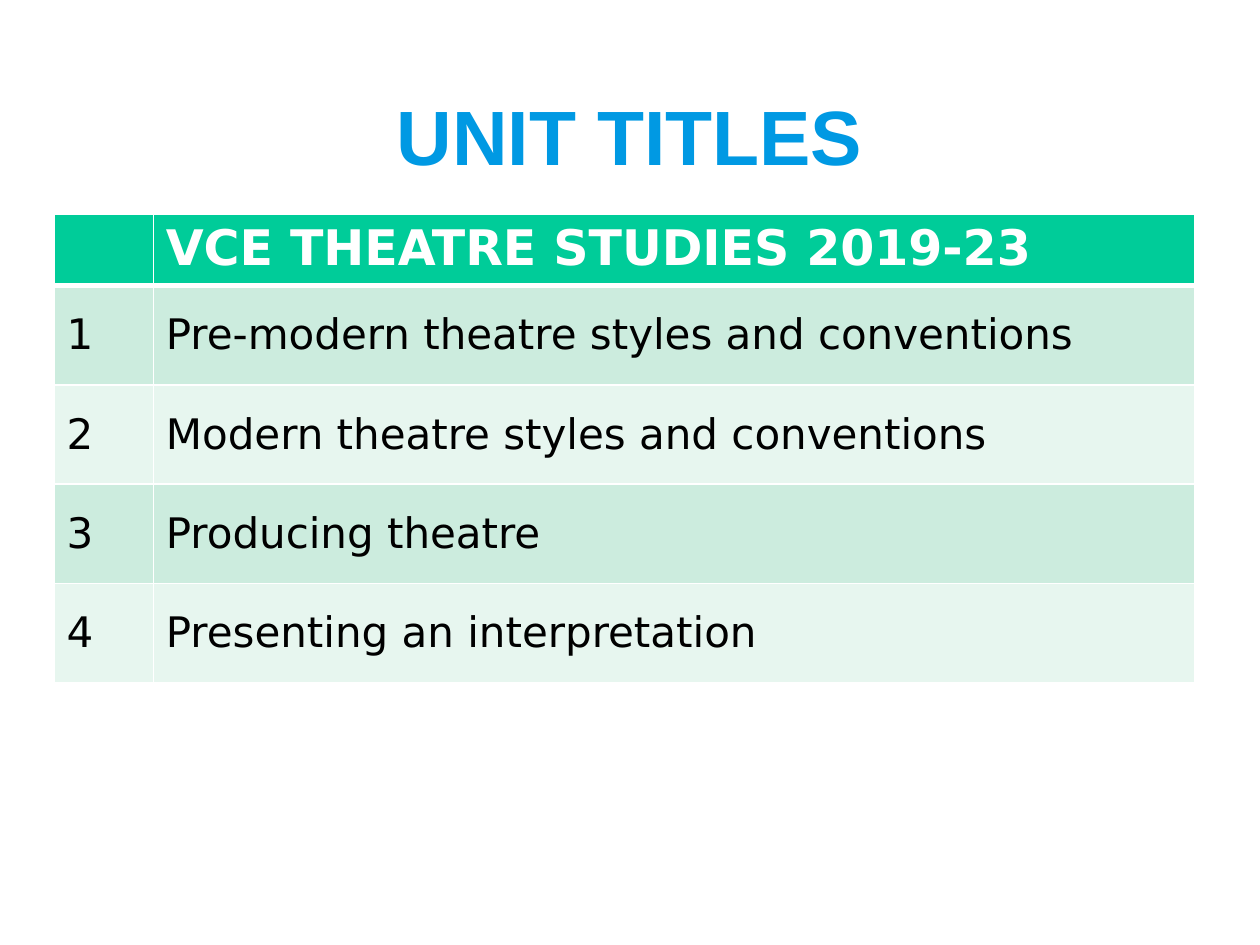
from lxml import etree
from pptx import Presentation
from pptx.dml.color import RGBColor
from pptx.enum.text import MSO_ANCHOR, PP_ALIGN
from pptx.oxml.ns import qn
from pptx.util import Cm, Pt

MIDDLE = MSO_ANCHOR.MIDDLE
CENTER = PP_ALIGN.CENTER

TITLE_BLUE = RGBColor(0x00, 0x99, 0xE3)
HEADER_GREEN = RGBColor(0x00, 0xCC, 0x99)
DARK_BAND = RGBColor(0xCC, 0xEC, 0xDE)
LIGHT_BAND = RGBColor(0xE7, 0xF6, 0xEF)
WHITE = RGBColor(0xFF, 0xFF, 0xFF)
BLACK = RGBColor(0x00, 0x00, 0x00)

HEADING = "VCE THEATRE STUDIES 2019-23"
UNITS = [
    "Pre-modern theatre styles and conventions",
    "Modern theatre styles and conventions",
    "Producing theatre",
    "Presenting an interpretation",
]


def set_font(paragraph, name, size, color, bold):
    font = paragraph.font
    font.name = name
    font.size = Pt(size)
    font.bold = bold
    font.color.rgb = color


def add_title(slide, text):
    title = slide.shapes.add_textbox(Cm(1.27), Cm(1.52), Cm(22.86), Cm(2.41))
    frame = title.text_frame
    frame.word_wrap = True
    frame.vertical_anchor = MIDDLE
    paragraph = frame.paragraphs[0]
    paragraph.text = text
    paragraph.alignment = CENTER
    set_font(paragraph, "Arial", 44, TITLE_BLUE, True)


def set_borders(cell, bottom_width):
    properties = cell._tc.get_or_add_tcPr()
    widths = {"a:lnL": 1, "a:lnR": 1, "a:lnT": 1, "a:lnB": bottom_width}
    for side, width in widths.items():
        line = etree.SubElement(properties, qn(side), w=str(Pt(width)))
        fill = etree.SubElement(line, qn("a:solidFill"))
        etree.SubElement(fill, qn("a:srgbClr"), val=str(WHITE))


def style_cell(cell, color, bottom_width=1):
    set_borders(cell, bottom_width)
    cell.fill.solid()
    cell.fill.fore_color.rgb = color


def fill_header(row):
    for cell in row.cells:
        style_cell(cell, HEADER_GREEN, 3)
    paragraph = row.cells[1].text_frame.paragraphs[0]
    paragraph.text = HEADING
    set_font(paragraph, "DejaVu Sans", 28, WHITE, True)


def fill_unit(row, number, unit):
    band = DARK_BAND if number % 2 else LIGHT_BAND
    for cell, text in zip(row.cells, (str(number), unit)):
        style_cell(cell, band)
        cell.vertical_anchor = MIDDLE
        paragraph = cell.text_frame.paragraphs[0]
        paragraph.text = text
        set_font(paragraph, "DejaVu Sans", 24, BLACK, False)
    number_paragraph = row.cells[0].text_frame.paragraphs[0]
    number_paragraph.space_before = Pt(6)
    number_paragraph.space_after = Pt(6)


def add_unit_table(slide):
    header_height, unit_height = Cm(1.4), Cm(2)
    number_width, unit_width = Cm(2), Cm(21)
    table = slide.shapes.add_table(
        len(UNITS) + 1, 2, Cm(1.09), Cm(4.32),
        number_width + unit_width, header_height + unit_height * len(UNITS),
    ).table
    table.columns[0].width = number_width
    table.columns[1].width = unit_width
    table.rows[0].height = header_height
    fill_header(table.rows[0])
    for number, unit in enumerate(UNITS, start=1):
        row = table.rows[number]
        row.height = unit_height
        fill_unit(row, number, unit)


def main():
    presentation = Presentation()
    presentation.slide_width = Cm(25.4)
    presentation.slide_height = Cm(19.05)
    slide = presentation.slides.add_slide(presentation.slide_layouts[6])
    add_title(slide, "UNIT TITLES")
    add_unit_table(slide)
    presentation.save("out.pptx")


if __name__ == "__main__":
    main()
